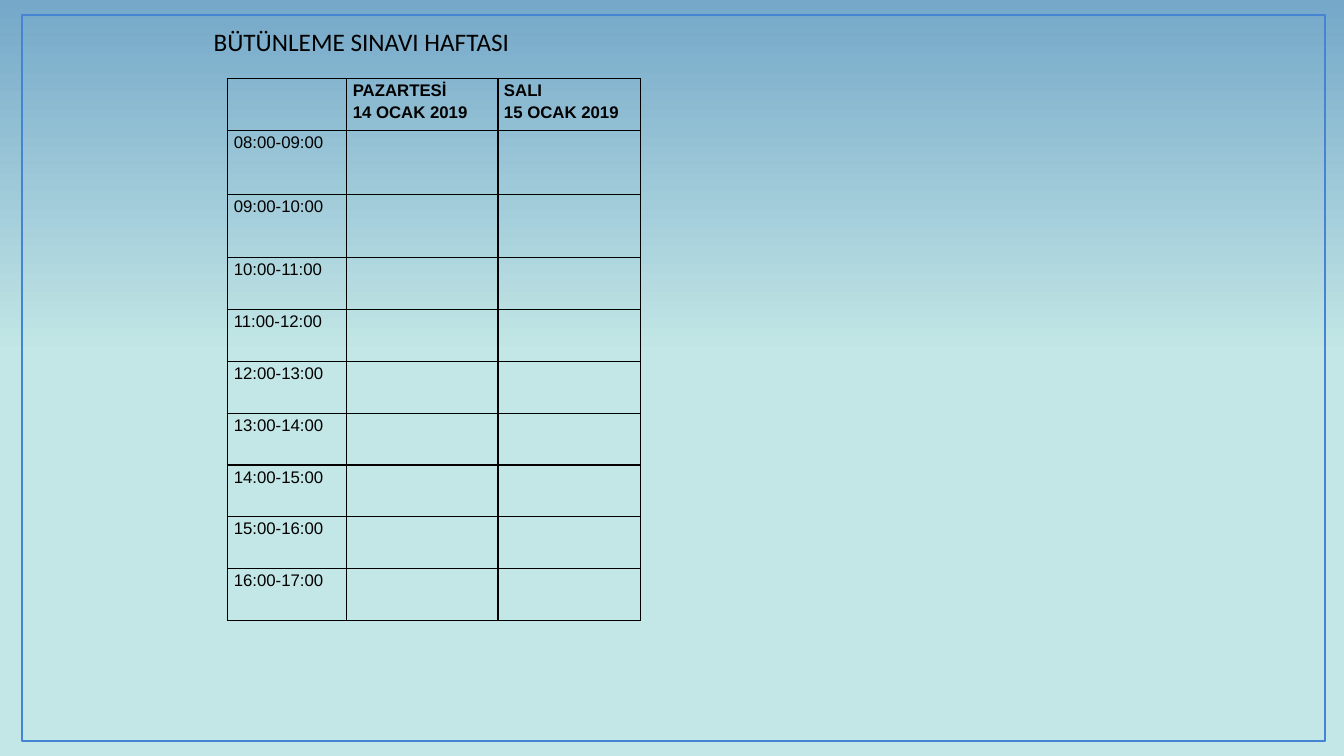
from lxml import etree
from pptx import Presentation
from pptx.dml.color import RGBColor
from pptx.enum.shapes import MSO_SHAPE
from pptx.enum.text import MSO_ANCHOR, MSO_AUTO_SIZE, PP_ALIGN
from pptx.oxml.ns import qn
from pptx.util import Pt

RECTANGLE = MSO_SHAPE.RECTANGLE
TOP = MSO_ANCHOR.TOP
LEFT = PP_ALIGN.LEFT
FIT_SHAPE = MSO_AUTO_SIZE.SHAPE_TO_FIT_TEXT
TITLE_ONLY = 5

BLACK = "000000"
PALE = "C3E7E6"
BLUE = "75A8C9"
FRAME_BLUE = "4584D3"


def color(value):
    return RGBColor.from_string(value)


class SlideBuilder:
    title_font = "Calibri"
    table_font = "Arial"
    title_size = 18
    table_size = 12
    line_spacing = 1.15
    cell_margin = 4.3

    def __init__(self, deck):
        self.page = deck.slides.add_slide(deck.slide_layouts[TITLE_ONLY])

    def background(self, stops, angle):
        fill = self.page.background.fill
        fill.gradient()
        fill.gradient_angle = angle
        for stop, (position, shade) in zip(fill.gradient_stops, stops):
            stop.position = position
            stop.color.rgb = color(shade)

    def frame(self, left, top, width, height):
        box = self.page.shapes.add_shape(
            RECTANGLE, Pt(left), Pt(top), Pt(width), Pt(height))
        box.shadow.inherit = False
        box.fill.background()
        box.line.color.rgb = color(FRAME_BLUE)
        box.line.width = Pt(1.5)

    def span(self, para, text, font, size, bold=False):
        span = para.add_run()
        span.text = text
        span.font.name = font
        span.font.size = Pt(size)
        span.font.bold = bold
        span.font.color.rgb = color(BLACK)

    def title(self, text, left, top, width, height):
        box = self.page.shapes.title
        box.left, box.top = Pt(left), Pt(top)
        box.width, box.height = Pt(width), Pt(height)
        frame = box.text_frame
        frame.word_wrap = False
        frame.auto_size = FIT_SHAPE
        frame.vertical_anchor = TOP
        para = frame.paragraphs[0]
        para.alignment = LEFT
        self.span(para, text, self.title_font, self.title_size)

    def borders(self, cell):
        properties = cell._tc.get_or_add_tcPr()
        for index, side in enumerate(("a:lnL", "a:lnR", "a:lnT", "a:lnB")):
            line = etree.Element(qn(side), w=str(Pt(1)))
            fill = etree.SubElement(line, qn("a:solidFill"))
            etree.SubElement(fill, qn("a:srgbClr"), val=BLACK)
            properties.insert(index, line)

    def cell(self, cell, lines, bold):
        cell.fill.background()
        self.borders(cell)
        cell.margin_left = cell.margin_right = Pt(self.cell_margin)
        cell.margin_top = cell.margin_bottom = Pt(0)
        frame = cell.text_frame
        for index, text in enumerate(lines):
            para = frame.add_paragraph() if index else frame.paragraphs[0]
            para.line_spacing = self.line_spacing
            self.span(para, text, self.table_font, self.table_size, bold)

    def table(self, rows, left, top, widths, heights):
        table = self.page.shapes.add_table(
            len(rows), len(widths), Pt(left), Pt(top),
            Pt(sum(widths)), Pt(sum(heights))).table
        table.first_row = table.horz_banding = False
        for column, width in zip(table.columns, widths):
            column.width = Pt(width)
        for r, (row, height) in enumerate(zip(rows, heights)):
            table.rows[r].height = Pt(height)
            for c, lines in enumerate(row):
                self.cell(table.cell(r, c), lines, bold=r == 0)


def main():
    deck = Presentation()
    deck.slide_width, deck.slide_height = Pt(960), Pt(540)

    slide = SlideBuilder(deck)
    slide.background([(0.53, PALE), (1, BLUE)], angle=90)
    slide.frame(15.8, 10.8, 931, 518.4)
    slide.title("BÜTÜNLEME SINAVI HAFTASI", 145.4, 15.1, 231.8, 28.8)

    header = [[], ["PAZARTESİ", "14 OCAK 2019"], ["SALI", "15 OCAK 2019"]]
    hours = [[[f"{hour:02}:00-{hour + 1:02}:00"], [], []]
             for hour in range(8, 17)]
    slide.table([header] + hours, 162.7, 56.2,
                widths=[85, 108, 102], heights=[37, 46, 45] + [37] * 7)

    deck.save("out.pptx")


if __name__ == "__main__":
    main()
